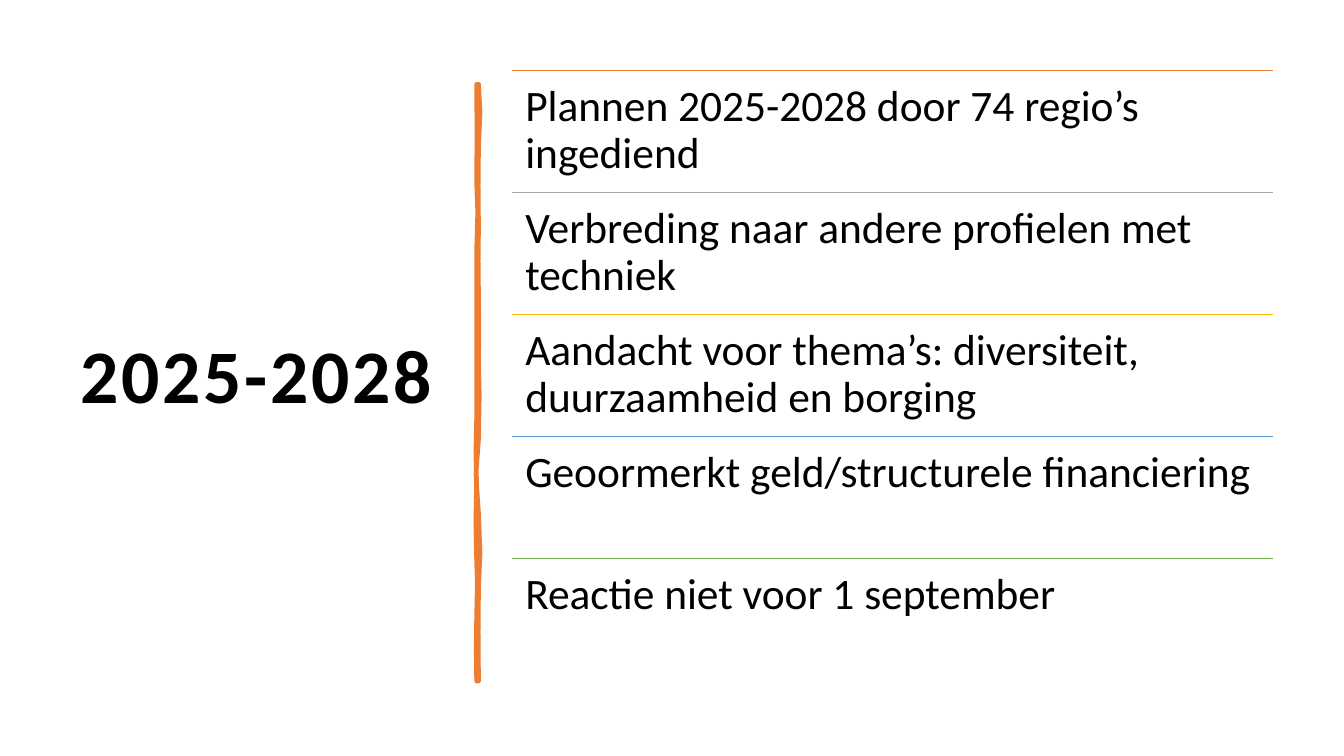
from lxml.etree import SubElement
from pptx import Presentation
from pptx.dml.color import RGBColor
from pptx.enum.shapes import MSO_CONNECTOR
from pptx.enum.text import MSO_ANCHOR
from pptx.oxml.ns import qn
from pptx.util import Inches, Pt

THEME = {
    "font": "Calibri",
    "text": RGBColor.from_string("000000"),
    "brush": RGBColor.from_string("ED7D31"),
    "title_size": Pt(54),
    "body_size": Pt(31),
    "brush_width": Pt(3.25),
    "rule_width": Pt(1),
}
ROWS = [
    ("Plannen 2025-2028 door 74 regio’s ingediend", "ED7D31"),
    ("Verbreding naar andere profielen met techniek", "A5A5A5"),
    ("Aandacht voor thema’s: diversiteit, duurzaamheid en borging", "FFC000"),
    ("Geoormerkt geld/structurele financiering", "5B9BD5"),
    ("Reactie niet voor 1 september", "70AD47"),
]
BRUSH_START = (4.75, 0.84)
BRUSH_CURVES = [
    (4.77, 1.02, 4.77, 1.19, 4.75, 1.46), (4.73, 1.73, 4.76, 1.95, 4.75, 2.26),
    (4.74, 2.57, 4.75, 2.62, 4.75, 2.94), (4.74, 3.25, 4.77, 3.42, 4.75, 3.56),
    (4.73, 3.7, 4.79, 4.14, 4.75, 4.36), (4.71, 4.57, 4.72, 4.84, 4.75, 5.1),
    (4.77, 5.36, 4.77, 5.64, 4.75, 5.84), (4.73, 6.03, 4.76, 6.5, 4.75, 6.76),
    (4.74, 6.76, 4.73, 6.76, 4.73, 6.76), (4.74, 6.46, 4.71, 6.44, 4.73, 6.13),
    (4.74, 5.83, 4.74, 5.7, 4.73, 5.57), (4.72, 5.44, 4.72, 4.95, 4.73, 4.77),
    (4.73, 4.59, 4.71, 4.45, 4.73, 4.15), (4.74, 3.86, 4.72, 3.73, 4.73, 3.35),
    (4.74, 2.98, 4.72, 2.81, 4.73, 2.5), (4.74, 2.18, 4.75, 2, 4.73, 1.81),
    (4.7, 1.63, 4.77, 1.04, 4.73, 0.84),
]
BRUSH_CENTER = (4.74, 3.8)
CURVE_STEPS = 2
LIST_LEFT, LIST_TOP, LIST_WIDTH, ROW_HEIGHT = 5.08, 0.7, 7.55, 1.21


def add_text(slide, text, box, inset, size, bold, anchor):
    frame = slide.shapes.add_textbox(*map(Inches, box)).text_frame
    frame_format = {"word_wrap": True, "vertical_anchor": anchor}
    for side, margin in zip(("left", "top", "right", "bottom"), inset):
        frame_format[f"margin_{side}"] = Inches(margin)
    for name, value in frame_format.items():
        setattr(frame, name, value)
    paragraph = frame.paragraphs[0]
    paragraph.line_spacing = 0.9
    run = paragraph.add_run()
    run.text = text
    font_format = {"name": THEME["font"], "size": size, "bold": bold}
    for name, value in font_format.items():
        setattr(run.font, name, value)
    run.font.color.rgb = THEME["text"]
    return run


def lay_flat(x, y):
    center_x, center_y = BRUSH_CENTER
    return Inches(center_x + y - center_y), Inches(center_y + center_x - x)


presentation = Presentation()
presentation.slide_width = Inches(13.33)
presentation.slide_height = Inches(7.5)
slide = presentation.slides.add_slide(presentation.slide_layouts[6])

title = add_text(slide, "2025-2028", (0.7, 0.7, 3.74, 6.11),
                 (0.1, 0.05, 0.1, 0.05), THEME["title_size"], True, MSO_ANCHOR.MIDDLE)
title._r.get_or_add_rPr().set("spc", "200")

outline = []
x0, y0 = BRUSH_START
for x1, y1, x2, y2, x3, y3 in BRUSH_CURVES:
    for step in range(1, CURVE_STEPS + 1):
        t = step / CURVE_STEPS
        weights = ((1 - t) ** 3, 3 * t * (1 - t) ** 2, 3 * t ** 2 * (1 - t), t ** 3)
        outline.append(lay_flat(*(
            sum(weight * value for weight, value in zip(weights, values))
            for values in ((x0, x1, x2, x3), (y0, y1, y2, y3))
        )))
    x0, y0 = x3, y3
builder = slide.shapes.build_freeform(*lay_flat(*BRUSH_START))
builder.add_line_segments(outline, close=True)
brush = builder.convert_to_shape()
brush.rotation = 90
brush.shadow.inherit = False
brush.fill.solid()
brush.fill.fore_color.rgb = THEME["brush"]
brush.line.color.rgb = THEME["brush"]
brush.line.width = THEME["brush_width"]

for row, (text, color) in enumerate(ROWS):
    top = LIST_TOP + row * ROW_HEIGHT
    rule = slide.shapes.add_connector(
        MSO_CONNECTOR.STRAIGHT, Inches(LIST_LEFT), Inches(top),
        Inches(LIST_LEFT + LIST_WIDTH), Inches(top))
    rule.line.color.rgb = RGBColor.from_string(color)
    rule.line.width = THEME["rule_width"]
    SubElement(rule._element.spPr, qn("a:effectLst"))
    add_text(slide, text, (LIST_LEFT, top, LIST_WIDTH, ROW_HEIGHT),
             (0.13,) * 4, THEME["body_size"], False, MSO_ANCHOR.TOP)

presentation.save("out.pptx")
